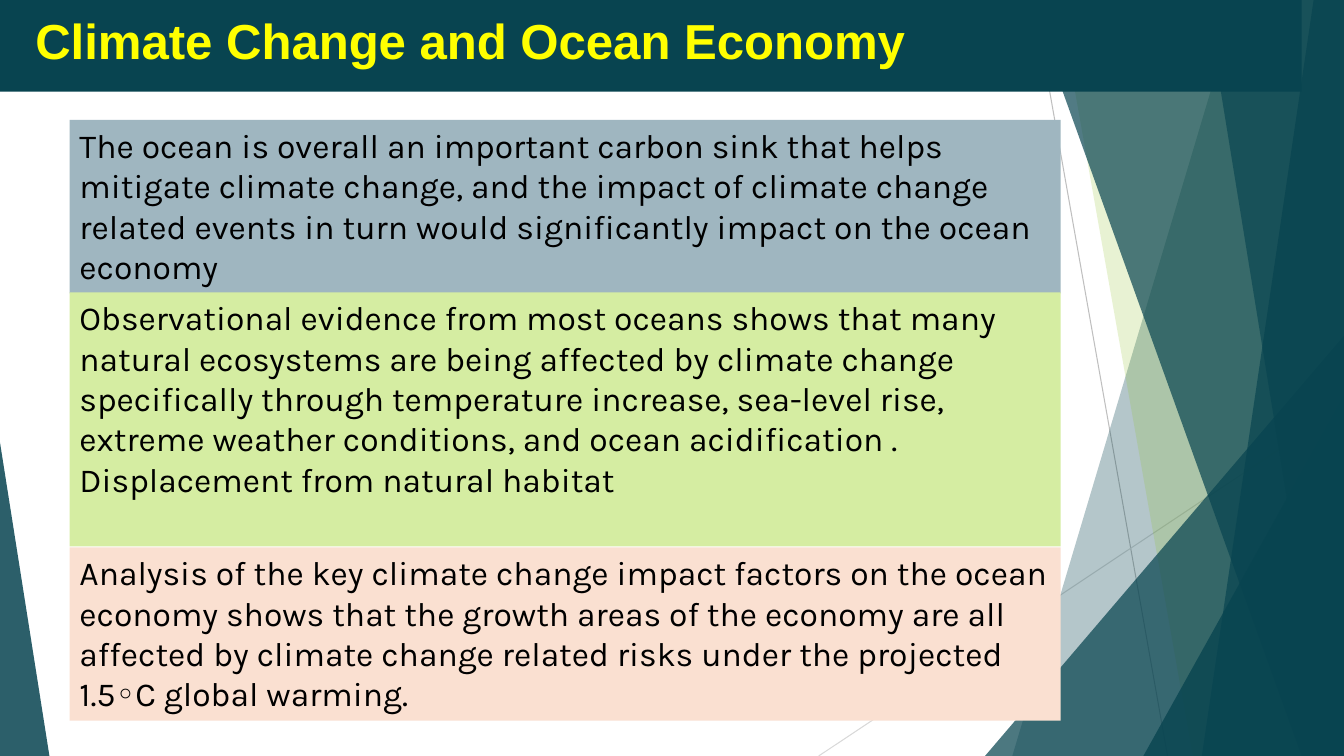
"""Build the slide on climate change and the ocean economy."""
from dataclasses import dataclass

from lxml import etree
from pptx import Presentation
from pptx.dml.color import RGBColor
from pptx.enum.shapes import MSO_CONNECTOR, MSO_SHAPE
from pptx.enum.text import MSO_ANCHOR, MSO_AUTO_SIZE, PP_ALIGN
from pptx.oxml.ns import qn
from pptx.util import Inches, Pt

STRAIGHT = MSO_CONNECTOR.STRAIGHT
RECTANGLE = MSO_SHAPE.RECTANGLE
TRIANGLE = MSO_SHAPE.ISOSCELES_TRIANGLE
TOP = MSO_ANCHOR.TOP
NO_FIT = MSO_AUTO_SIZE.NONE
LEFT = PP_ALIGN.LEFT

WIDTH, HEIGHT, FACET_TOP = 13.33, 7.5, -0.01
COLORS = {
    "teal": "084450", "green": "90C226", "yellow": "FFFF00", "black": "000000",
    "blue panel": "9FB6C0", "green panel": "D5EDA2", "peach panel": "FAE0D1",
    "grey": "BFBFBF", "light grey": "D9D9D9",
}


@dataclass
class Ray:
    x1: float
    y1: float
    x2: float
    y2: float
    color: str


@dataclass
class Facet:
    top_x: float
    bottom_x: float
    color: str
    opacity: int


@dataclass
class Corner:
    x: float
    y: float
    w: float
    apex: float
    opacity: int


@dataclass
class Panel:
    y: float
    h: float
    color: str
    text: str


RAYS = [
    Ray(10.25, 0, 11.58, HEIGHT, "grey"),
    Ray(WIDTH, 4.03, 8.12, HEIGHT, "light grey"),
]
BACKDROP = [
    Facet(12.28, 10.04, "teal", 30),
    Facet(10.5, 11.83, "green", 20),
    Corner(9.77, 3.33, 3.56, 1, 72),
    Facet(10.21, 12.91, "teal", 70),
    Facet(13.03, 11.92, "teal", 70),
    Facet(11.96, 13.18, "teal", 65),
    Corner(11.34, 3.93, 1.99, 1, 80),
    Corner(0, 4.39, 0.49, 0, 85),
]
PANELS = [
    Panel(1.19, 1.72, "blue panel",
          "The ocean is overall an important carbon sink that helps mitigate climate "
          "change, and the impact of climate change related events in turn would "
          "significantly impact on the ocean economy"),
    Panel(2.9, 2.52, "green panel",
          "Observational evidence from most oceans shows that many natural ecosystems "
          "are being affected by climate change specifically through temperature "
          "increase, sea-level rise, extreme weather conditions, and ocean "
          "acidification . Displacement from natural habitat"),
    Panel(5.43, 1.72, "peach panel",
          "Analysis of the key climate change impact factors on the ocean economy "
          "shows that the growth areas of the economy are all affected by climate "
          "change related risks under the projected 1.5◦C global warming."),
]


def rgb(color: str) -> RGBColor:
    """Look up a named colour."""
    return RGBColor.from_string(COLORS[color])


def paint(sp, color: str, opacity: int = 100) -> None:
    """Give a shape a plain fill without line or shadow."""
    sp.shadow.inherit = False
    sp.line.fill.background()
    sp.fill.solid()
    sp.fill.fore_color.rgb = rgb(color)
    if opacity < 100:
        fill = sp.element.spPr.find(qn("a:solidFill"))
        etree.SubElement(fill[0], qn("a:alpha"), val=str(opacity * 1000))


def write(sp, text: str, font: str, size: float, color: str, bold: bool = False) -> None:
    """Write one left-aligned paragraph from the top of a shape."""
    tf = sp.text_frame
    tf.word_wrap, tf.auto_size, tf.vertical_anchor = True, NO_FIT, TOP
    p = tf.paragraphs[0]
    p.alignment = LEFT
    r = p.add_run()
    r.text = text
    r.font.name, r.font.size, r.font.bold = font, Pt(size), bold
    r.font.color.rgb = rgb(color)


def draw_ray(s, ray: Ray) -> None:
    """Draw a thin background line."""
    line = s.shapes.add_connector(
        STRAIGHT, *map(Inches, (ray.x1, ray.y1, ray.x2, ray.y2)))
    line.line.color.rgb = rgb(ray.color)
    line.line.width = Pt(0.75)
    etree.SubElement(line.element.spPr, qn("a:effectLst"))


def draw_facet(s, facet: Facet) -> None:
    """Draw a full-height facet that reaches the right edge."""
    points = [(WIDTH, FACET_TOP), (WIDTH, HEIGHT), (facet.bottom_x, HEIGHT)]
    builder = s.shapes.build_freeform(Inches(facet.top_x), Inches(FACET_TOP))
    builder.add_line_segments([(Inches(x), Inches(y)) for x, y in points])
    paint(builder.convert_to_shape(), facet.color, facet.opacity)


def draw_corner(s, corner: Corner) -> None:
    """Draw a right triangle standing on the bottom edge."""
    sp = s.shapes.add_shape(
        TRIANGLE, *map(Inches, (corner.x, corner.y, corner.w, HEIGHT - corner.y)))
    sp.adjustments[0] = corner.apex
    paint(sp, "teal", corner.opacity)


def draw_panel(s, panel: Panel) -> None:
    """Draw a coloured text panel."""
    sp = s.shapes.add_shape(
        RECTANGLE, *map(Inches, (0.69, panel.y, 9.83, panel.h)))
    paint(sp, panel.color)
    write(sp, panel.text, "Karla", 24, "black")


def draw_title(s) -> None:
    """Format the title as a band in front of the backdrop."""
    sp = s.shapes.title
    sp.left, sp.top, sp.width, sp.height = map(Inches, (0, 0, 12.91, 0.91))
    sp.fill.solid()
    sp.fill.fore_color.rgb = rgb("teal")
    sp.text_frame.margin_left = Inches(0.35)
    sp.text_frame.margin_top = Inches(0.1)
    write(sp, "Climate Change and Ocean Economy", "Arial", 35.1, "yellow", True)
    s.shapes.element.append(sp.element)


def main() -> None:
    """Build and save the presentation."""
    prs = Presentation()
    prs.slide_width, prs.slide_height = Inches(WIDTH), Inches(HEIGHT)
    s = prs.slides.add_slide(prs.slide_layouts[5])
    for ray in RAYS:
        draw_ray(s, ray)
    for piece in BACKDROP:
        if isinstance(piece, Facet):
            draw_facet(s, piece)
        else:
            draw_corner(s, piece)
    for panel in PANELS:
        draw_panel(s, panel)
    draw_title(s)
    prs.save("out.pptx")


if __name__ == "__main__":
    main()
